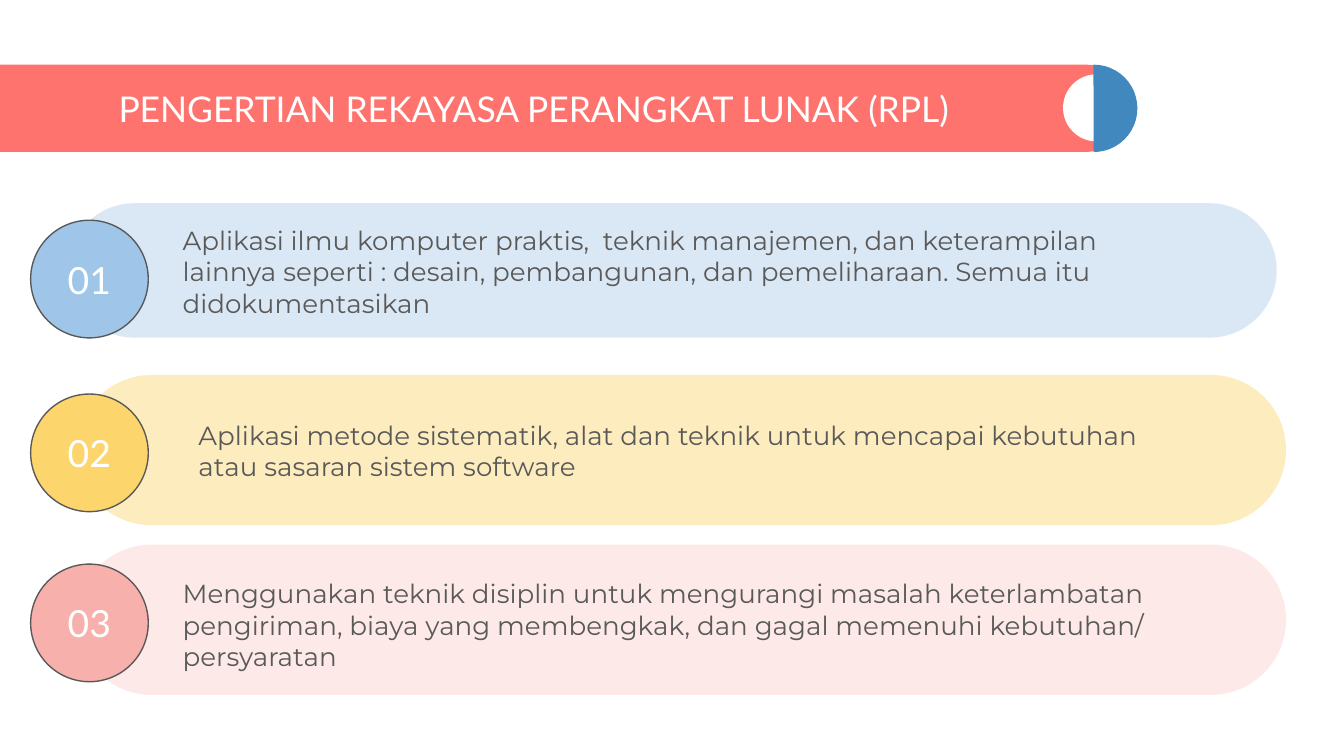
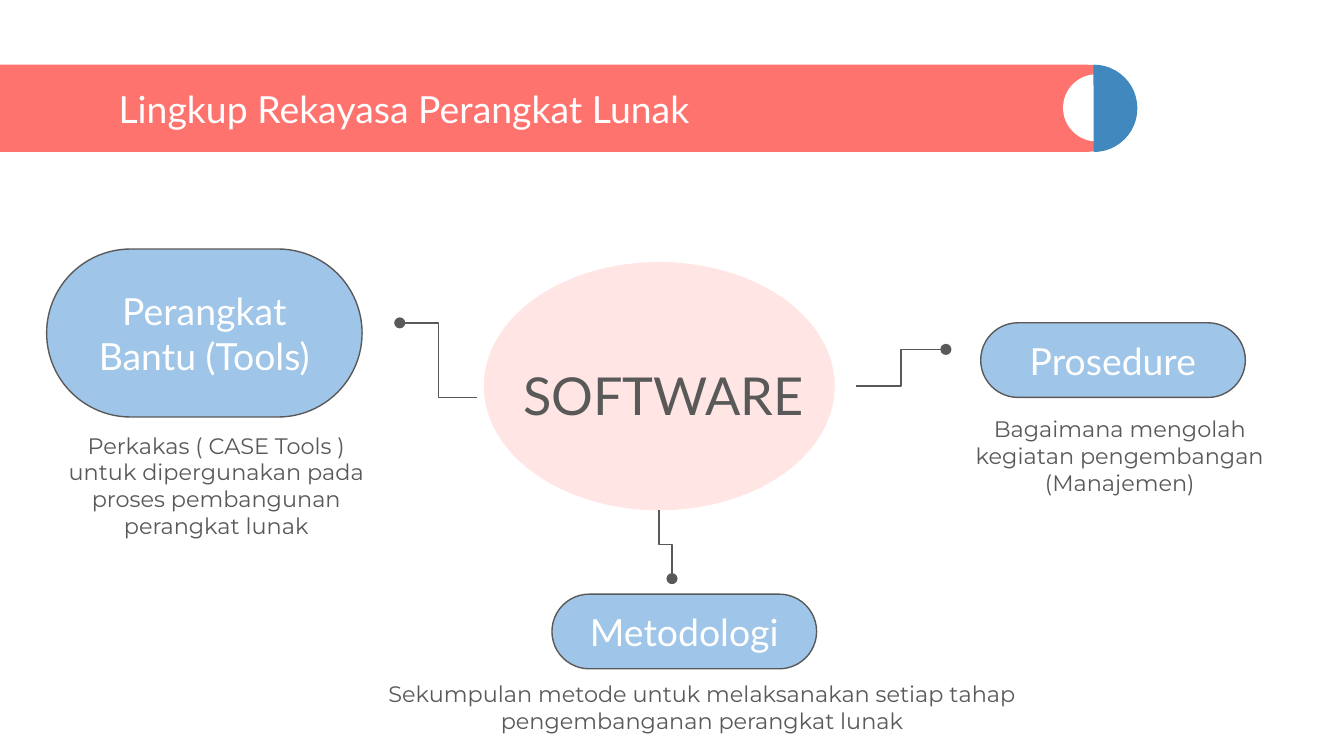
import pptx
import pptx.util
import pptx.dml.color
import pptx.enum.shapes
import pptx.enum.text
import pptx.oxml.ns
import lxml.etree

Pt = pptx.util.Pt
SHAPE = pptx.enum.shapes.MSO_SHAPE
ALIGN = pptx.enum.text.PP_ALIGN
ANCHOR = pptx.enum.text.MSO_ANCHOR


def color(value):
    return pptx.dml.color.RGBColor.from_string(value)


def assign(target, values):
    for name, value in values.items():
        setattr(target, name, value)


def add_child(parent, tag, **attributes):
    return lxml.etree.SubElement(parent, pptx.oxml.ns.qn(tag), attributes)


class Style:
    coral, blue, sky = "FF736E", "4088BE", "9FC5E8"
    white, ink = "FFFFFF", "595959"
    heading = {"name": "Lato", "size": Pt(20)}
    body = {"name": "Montserrat", "size": Pt(14)}
    caption = {"name": "Montserrat", "size": Pt(12)}
    frame = {"word_wrap": True, "margin_left": Pt(7.2), "margin_right": Pt(7.2),
             "margin_top": Pt(7.2), "margin_bottom": Pt(7.2)}

    def __init__(self):
        self.deck = pptx.Presentation()
        assign(self.deck, {"slide_width": Pt(720), "slide_height": Pt(405)})
        self.page = None

    def start_page(self, title, size=20):
        self.page = self.deck.slides.add_slide(self.deck.slide_layouts[6])
        self.shape(SHAPE.ROUNDED_RECTANGLE, (-23, 34.6, 628, 46.8), self.coral, adjust=[0.5])
        self.shape(SHAPE.OVAL, (569.5, 39.8, 36, 36), self.white)
        half = self.shape(SHAPE.PIE, (562.5, 34.6, 46.8, 46.8), self.blue, adjust=[53.67, 162])
        half.rotation = 180
        self.text((56.4, 43.2, 502, 29.5), title, {**self.heading, "size": Pt(size)},
                  self.white, anchor=ANCHOR.MIDDLE)

    def shape(self, kind, place, fill, alpha=100, outline=None, adjust=()):
        box = self.page.shapes.add_shape(kind, *map(Pt, place))
        box.shadow.inherit = False
        for index, value in enumerate(adjust):
            box.adjustments[index] = value
        box.fill.solid()
        box.fill.fore_color.rgb = color(fill)
        if alpha < 100:
            properties = box._element.spPr
            tint = properties.find(".//" + pptx.oxml.ns.qn("a:srgbClr"))
            add_child(tint, "a:alpha", val=str(alpha * 1000))
        if outline:
            box.line.color.rgb = color(outline)
            box.line.width = Pt(0.75)
        else:
            box.line.fill.background()
        return box

    def fill_text(self, box, words, font, ink, align=ALIGN.LEFT, anchor=ANCHOR.TOP, after=0):
        assign(box.text_frame, {**self.frame, "vertical_anchor": anchor})
        para = box.text_frame.paragraphs[0]
        assign(para, {"alignment": align, "space_after": Pt(after)})
        span = para.add_run()
        span.text = words
        assign(span.font, font)
        span.font.color.rgb = color(ink)

    def text(self, place, words, font, ink, **layout):
        box = self.page.shapes.add_textbox(*map(Pt, place))
        self.fill_text(box, words, font, ink, **layout)

    def label(self, kind, place, words, fill, adjust=()):
        box = self.shape(kind, place, fill, outline=self.ink, adjust=adjust)
        self.fill_text(box, words, self.heading, self.white, ALIGN.CENTER, ANCHOR.MIDDLE)

    def elbow(self, start, end, vertical=False):
        middle_x, middle_y = (start[0] + end[0]) / 2, (start[1] + end[1]) / 2
        half_x, half_y = (end[0] - start[0]) / 2, (end[1] - start[1]) / 2
        if vertical:
            half_x, half_y = -half_y, half_x
        corners = (middle_x - half_x, middle_y - half_y, middle_x + half_x, middle_y + half_y)
        line = self.page.shapes.add_connector(
            pptx.enum.shapes.MSO_CONNECTOR.ELBOW, *map(Pt, corners))
        line.line.color.rgb = color(self.ink)
        line.line.width = Pt(0.75)
        properties = line._element.spPr
        if vertical:
            properties.find(pptx.oxml.ns.qn("a:xfrm")).set("rot", str(270 * 60000))
        add_child(properties.find(pptx.oxml.ns.qn("a:ln")), "a:tailEnd", type="oval")
        add_child(properties, "a:effectLst")


def definition_page(style):
    style.start_page("PENGERTIAN REKAYASA PERANGKAT LUNAK (RPL)", 19)
    rows = [
        ((36, 108.9, 648, 72), (style.sky, 38), style.sky, 118, (90.7, 113, 548.6, 64),
         "Aplikasi ilmu komputer praktis,  teknik manajemen, dan keterampilan lainnya "
         "seperti : desain, pembangunan, dan pemeliharaan. Semua itu didokumentasikan"),
        ((41, 200.9, 648, 80.5), ("FBBE18", 28), "FCD66C", 211.1, (99.2, 217.4, 531.4, 64),
         "Aplikasi metode sistematik, alat dan teknik untuk mencapai kebutuhan "
         "atau sasaran sistem software"),
        ((41, 291.8, 648, 80.5), ("F8B0AD", 28), "F8B0AD", 302.2, (90.7, 302.4, 531.4, 64),
         "Menggunakan teknik disiplin untuk mengurangi masalah keterlambatan pengiriman, "
         "biaya yang membengkak, dan gagal memenuhi kebutuhan/ persyaratan"),
    ]
    for number, (band, tint, fill, top, place, words) in enumerate(rows, 1):
        style.shape(SHAPE.ROUNDED_RECTANGLE, band, *tint, adjust=[0.5])
        style.label(SHAPE.OVAL, (16.4, top, 63, 63), f"{number:02}", fill)
        style.text(place, words, style.body, style.ink, after=16)


def scope_page(style):
    style.start_page("Lingkup Rekayasa Perangkat Lunak")
    style.shape(SHAPE.OVAL, (259.2, 140.4, 188, 133), style.coral, alpha=18)
    style.text((261.4, 187.2, 188, 56), "SOFTWARE", {**style.heading, "size": Pt(28)},
               style.ink, align=ALIGN.CENTER)
    style.elbow((458.6, 206.8), (506.8, 187.2))
    style.elbow((353, 273.4), (360, 310), vertical=True)
    style.elbow((255.6, 213), (214.2, 173))
    branches = [
        ("Metodologi", (295.7, 318.3, 141.8, 40), (157.7, 357.1, 437, 64),
         "Sekumpulan metode untuk melaksanakan setiap tahap pengembanganan perangkat lunak"),
        ("Perangkat Bantu (Tools)", (25, 133.4, 169, 90), (20.9, 224.1, 190, 64),
         "Perkakas ( CASE Tools ) untuk dipergunakan pada proses pembangunan perangkat lunak"),
        ("Prosedure", (525.4, 172.9, 141.8, 40), (504.9, 215.1, 190, 64),
         "Bagaimana mengolah kegiatan pengembangan (Manajemen)"),
    ]
    for name, pill, place, words in branches:
        style.label(SHAPE.ROUNDED_RECTANGLE, pill, name, style.sky, adjust=[0.5])
        style.text(place, words, style.caption, style.ink, align=ALIGN.CENTER, after=6)


def main():
    style = Style()
    definition_page(style)
    scope_page(style)
    style.deck.save("out.pptx")


if __name__ == "__main__":
    main()
